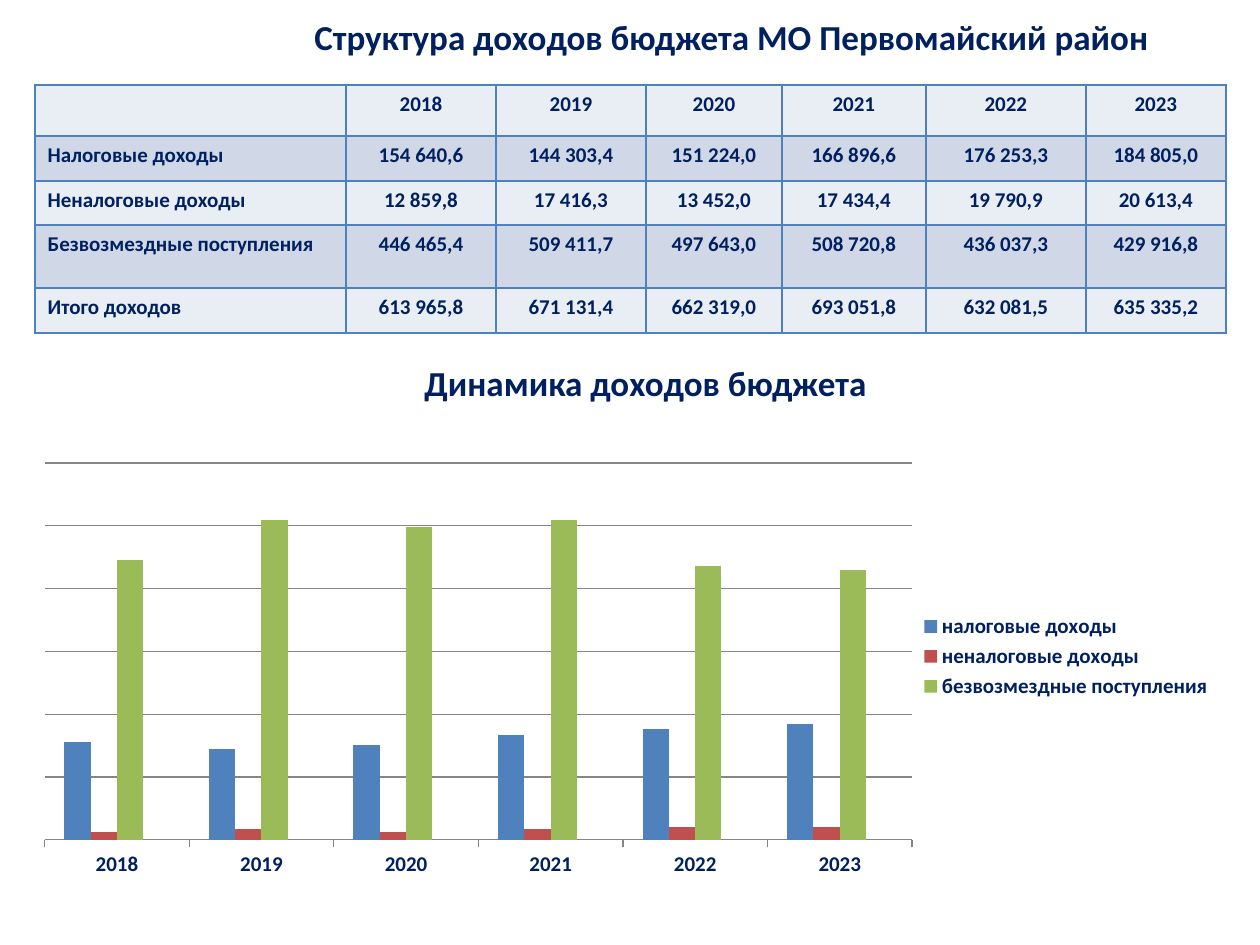
from lxml.etree import SubElement
from pptx import Presentation
from pptx.chart.data import CategoryChartData
from pptx.dml.color import RGBColor
from pptx.enum.chart import XL_CHART_TYPE as ChartType, XL_LEGEND_POSITION as LegendPosition
from pptx.enum.chart import XL_TICK_LABEL_POSITION as LabelPosition, XL_TICK_MARK as TickMark
from pptx.enum.text import MSO_AUTO_SIZE as AutoSize, PP_ALIGN as Align
from pptx.oxml import parse_xml
from pptx.oxml.ns import nsdecls, qn
from pptx.util import Emu, Pt

FONT = "Calibri"
COLORS = {
    "text": "002060", "border": "4F81BD", "light": "E9EDF4", "dark": "D0D8E8",
    "grid": "868686", "chart_text": "000000",
}
SERIES_COLORS = ["4F81BD", "C0504D", "9BBB59", "8064A2"]

YEARS = ["2018", "2019", "2020", "2021", "2022", "2023"]
INCOME = {
    "Налоговые доходы": [154640.6, 144303.4, 151224.0, 166896.6, 176253.3, 184805.0],
    "Неналоговые доходы": [12859.8, 17416.3, 13452.0, 17434.4, 19790.9, 20613.4],
    "Безвозмездные поступления": [446465.4, 509411.7, 497643.0, 508720.8, 436037.3, 429916.8],
}
COLUMN_WIDTHS = [311, 150, 150, 136, 144, 160, 140]
ROW_HEIGHTS = [51, 45, 44, 63, 45]


def px(length):
    return Emu(round(length * 914400 / 126))


def rgb(name):
    return RGBColor.from_string(COLORS[name])


def style_font(font, size=12, bold=True, color="text"):
    font.name = FONT
    font.size = Pt(size)
    font.bold = bold
    font.color.rgb = rgb(color)


def write(frame, text, align=Align.LEFT, **style):
    para = frame.paragraphs[0]
    para.alignment = align
    if text:
        span = para.add_run()
        span.text = text
        style_font(span.font, **style)
    else:
        style_font(para.font, **style)


def add_heading(page, text, left, top, width):
    box = page.shapes.add_textbox(px(left), px(top), px(width), px(55))
    frame = box.text_frame
    frame.word_wrap = False
    frame.auto_size = AutoSize.SHAPE_TO_FIT_TEXT
    write(frame, text, size=20)


def add_borders(cell):
    properties = cell._tc.get_or_add_tcPr()
    for index, side in enumerate(("lnL", "lnR", "lnT", "lnB")):
        properties.insert(index, parse_xml(
            f'<a:{side} {nsdecls("a")} w="12700"><a:solidFill>'
            f'<a:srgbClr val="{COLORS["border"]}"/></a:solidFill></a:{side}>'))


def format_number(value):
    return f"{value:,.1f}".replace(",", " ").replace(".", ",")


def income_rows():
    totals = [sum(values) for values in zip(*INCOME.values())]
    yield ["", *YEARS]
    for label, values in {**INCOME, "Итого доходов": totals}.items():
        yield [label, *map(format_number, values)]


def add_income_table(page, left, top):
    table = page.shapes.add_table(
        len(ROW_HEIGHTS), len(COLUMN_WIDTHS), px(left), px(top),
        px(sum(COLUMN_WIDTHS)), px(sum(ROW_HEIGHTS))).table
    table.first_row = table.horz_banding = False
    for column, width in zip(table.columns, COLUMN_WIDTHS):
        column.width = px(width)
    for row, height in zip(table.rows, ROW_HEIGHTS):
        row.height = px(height)
    for row_index, texts in enumerate(income_rows()):
        for column_index, text in enumerate(texts):
            cell = table.cell(row_index, column_index)
            cell.fill.solid()
            cell.fill.fore_color.rgb = rgb("dark" if row_index % 2 else "light")
            add_borders(cell)
            write(cell.text_frame, text, Align.CENTER if column_index else Align.LEFT)


def set_plot_layout(chart, **fractions):
    """Fix the inner plot area as fractions of the chart."""
    area = chart._chartSpace.chart.plotArea
    for old in area.findall(qn("c:layout")):
        area.remove(old)
    layout = parse_xml(f'<c:layout {nsdecls("c")}><c:manualLayout/></c:layout>')
    settings = {"layoutTarget": "inner", "xMode": "edge", "yMode": "edge", **fractions}
    for tag, value in settings.items():
        SubElement(layout[0], qn(f"c:{tag}")).set("val", str(value))
    area.insert(0, layout)


def add_legend(chart, hidden_entry):
    chart.has_legend = True
    legend = chart.legend
    legend.position = LegendPosition.RIGHT
    legend.include_in_layout = False
    style_font(legend.font)
    entry = parse_xml(
        f'<c:legendEntry {nsdecls("c")}><c:idx val="{hidden_entry}"/>'
        '<c:delete val="1"/></c:legendEntry>')
    legend._element.find(qn("c:legendPos")).addnext(entry)


def add_income_chart(page, left, top, width, height):
    """Chart the income, rounded to whole thousands."""
    data = CategoryChartData(number_format="0.0")
    data.categories = YEARS
    for label, values in INCOME.items():
        data.add_series(label.lower(), [round(value / 1000) for value in values])
    # The empty fourth series keeps its place in every cluster.
    data.add_series("Series 4", [None] * len(YEARS))
    chart = page.shapes.add_chart(
        ChartType.COLUMN_CLUSTERED, px(left), px(top), px(width), px(height), data).chart
    chart.has_title = False
    style_font(chart.font, size=10, bold=False, color="chart_text")

    plot = chart.plots[0]
    plot.gap_width = 150
    plot.overlap = 0
    plot.vary_by_categories = False
    for series, color in zip(plot.series, SERIES_COLORS):
        series.format.fill.solid()
        series.format.fill.fore_color.rgb = RGBColor.from_string(color)

    years = chart.category_axis
    years.major_tick_mark = TickMark.OUTSIDE
    years.tick_label_position = LabelPosition.NEXT_TO_AXIS
    years.format.line.color.rgb = rgb("grid")
    style_font(years.tick_labels.font)

    amounts = chart.value_axis
    amounts.visible = False
    amounts.minimum_scale = 0
    amounts.maximum_scale = 600
    amounts.major_unit = 100
    amounts.has_major_gridlines = True
    amounts.major_gridlines.format.line.color.rgb = rgb("grid")

    add_legend(chart, hidden_entry=len(INCOME))
    set_plot_layout(chart, x=0, y=40 / height, w=868 / width, h=377 / height)


def main():
    deck = Presentation()
    deck.slide_width, deck.slide_height = px(1260), px(945)
    page = deck.slides.add_slide(deck.slide_layouts[6])
    add_income_table(page, 35, 85)
    add_heading(page, "Структура доходов бюджета МО Первомайский район", 302, 9, 864)
    add_heading(page, "Динамика доходов бюджета", 412, 355, 478)
    add_income_chart(page, 44, 423, 1181, 467)
    deck.save("out.pptx")


if __name__ == "__main__":
    main()
